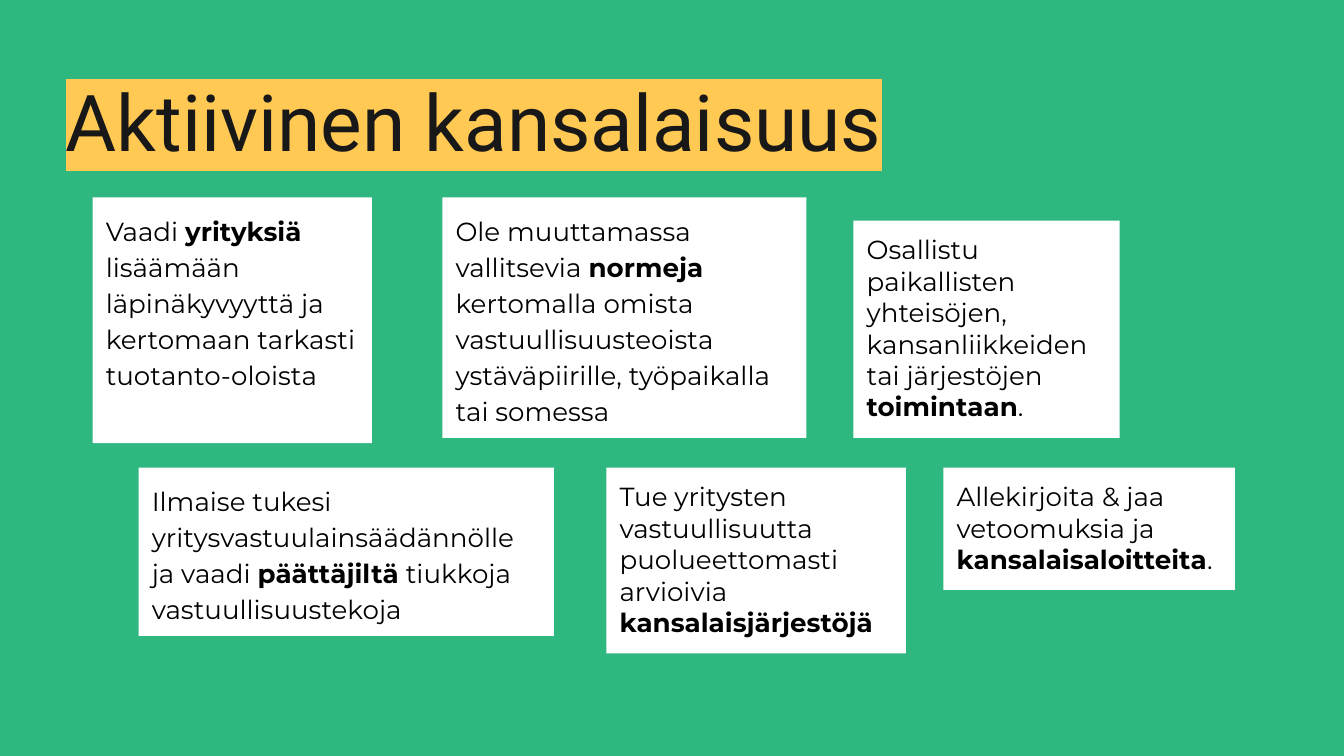
"""Build a slide of six ways to be an active citizen."""
from lxml.etree import SubElement
from pptx import Presentation
from pptx.dml.color import RGBColor
from pptx.enum.shapes import MSO_SHAPE as Shape
from pptx.enum.text import MSO_ANCHOR as Anchor, MSO_AUTO_SIZE as Fit, PP_ALIGN as Align
from pptx.oxml.ns import qn
from pptx.util import Cm, Pt

GREEN = RGBColor(0x2E, 0xB7, 0x7F)
YELLOW = RGBColor(0xFF, 0xC9, 0x53)
WHITE = RGBColor(0xFF, 0xFF, 0xFF)
BLACK = RGBColor(0, 0, 0)
INK = RGBColor(0x18, 0x18, 0x18)

TITLE = "Aktiivinen kansalaisuus"
LOOSE, TIGHT = 1.15, 1.0
TOP, LOW, BASE = 3.73, 8.84, 8.28
UPPER = [
    (1.75, TOP, 5.28, 8.38, LOOSE,
     ["Vaadi **yrityksiä** lisäämään läpinäkyvyyttä ja kertomaan tarkasti tuotanto-oloista"]),
    (8.36, TOP, 6.88, BASE, LOOSE,
     ["Ole muuttamassa vallitsevia **normeja** kertomalla omista "
      "vastuullisuusteoista ystäväpiirille, työpaikalla tai somessa"]),
    (16.13, 4.17, 5.03, BASE, TIGHT,
     ["Osallistu paikallisten yhteisöjen, kansanliikkeiden tai järjestöjen **toimintaan**."]),
]
LOWER = [
    (2.62, LOW, 7.85, 12.02, LOOSE,
     ["Ilmaise tukesi yritysvastuulainsäädännölle",
      "ja vaadi **päättäjiltä** tiukkoja vastuullisuustekoja"]),
    (11.46, LOW, 5.66, 12.35, TIGHT,
     ["Tue yritysten vastuullisuutta puolueettomasti arvioivia **kansalaisjärjestöjä**"]),
    (17.83, LOW, 5.51, 11.15, TIGHT,
     ["Allekirjoita & jaa vetoomuksia ja **kansalaisaloitteita**."]),
]


def write(shape, lines, face="Montserrat", size=14, color=BLACK, mark=WHITE,
          space=TIGHT, anchor=Anchor.TOP, fit=Fit.SHAPE_TO_FIT_TEXT):
    frame = shape.text_frame
    frame.word_wrap = True
    frame.auto_size = fit
    frame.vertical_anchor = anchor
    frame.margin_left = frame.margin_right = Cm(0.25)
    frame.margin_top = frame.margin_bottom = Cm(0.25)
    for row, line in enumerate(lines):
        para = frame.add_paragraph() if row else frame.paragraphs[0]
        para.alignment = Align.LEFT
        para.line_spacing = space
        for turn, part in enumerate(line.split("**")):
            if not part:
                continue
            run = para.add_run()
            run.text = part
            font = run.font
            font.name, font.size, font.bold = face, Pt(size), turn % 2 == 1
            font.color.rgb = color
            props = run._r.get_or_add_rPr()
            light = SubElement(props, qn("a:highlight"))
            SubElement(light, qn("a:srgbClr"), val=str(mark))
            props.find(qn("a:solidFill")).addnext(light)


def add_card(slide, left, top, width, bottom, space, lines):
    card = slide.shapes.add_shape(
        Shape.RECTANGLE, Cm(left), Cm(top), Cm(width), Cm(bottom - top))
    card.shadow.inherit = False
    card.fill.solid()
    card.fill.fore_color.rgb = WHITE
    card.line.fill.background()
    write(card, lines, space=space)


def main():
    deck = Presentation()
    deck.slide_width, deck.slide_height = Cm(25.4), Cm(14.29)
    slide = deck.slides.add_slide(deck.slide_layouts[5])
    back = slide.background.fill
    back.solid()
    back.fore_color.rgb = GREEN

    title = slide.shapes.title
    title.left, title.top = Cm(0.99), Cm(-0.71)
    title.width, title.height = Cm(20.6), Cm(5.69)
    write(title, [TITLE], face="Roboto", size=42, color=INK, mark=YELLOW,
          space=LOOSE, anchor=Anchor.MIDDLE, fit=Fit.NONE)

    for card in UPPER + LOWER:
        add_card(slide, *card)
    deck.save("out.pptx")


if __name__ == "__main__":
    main()
